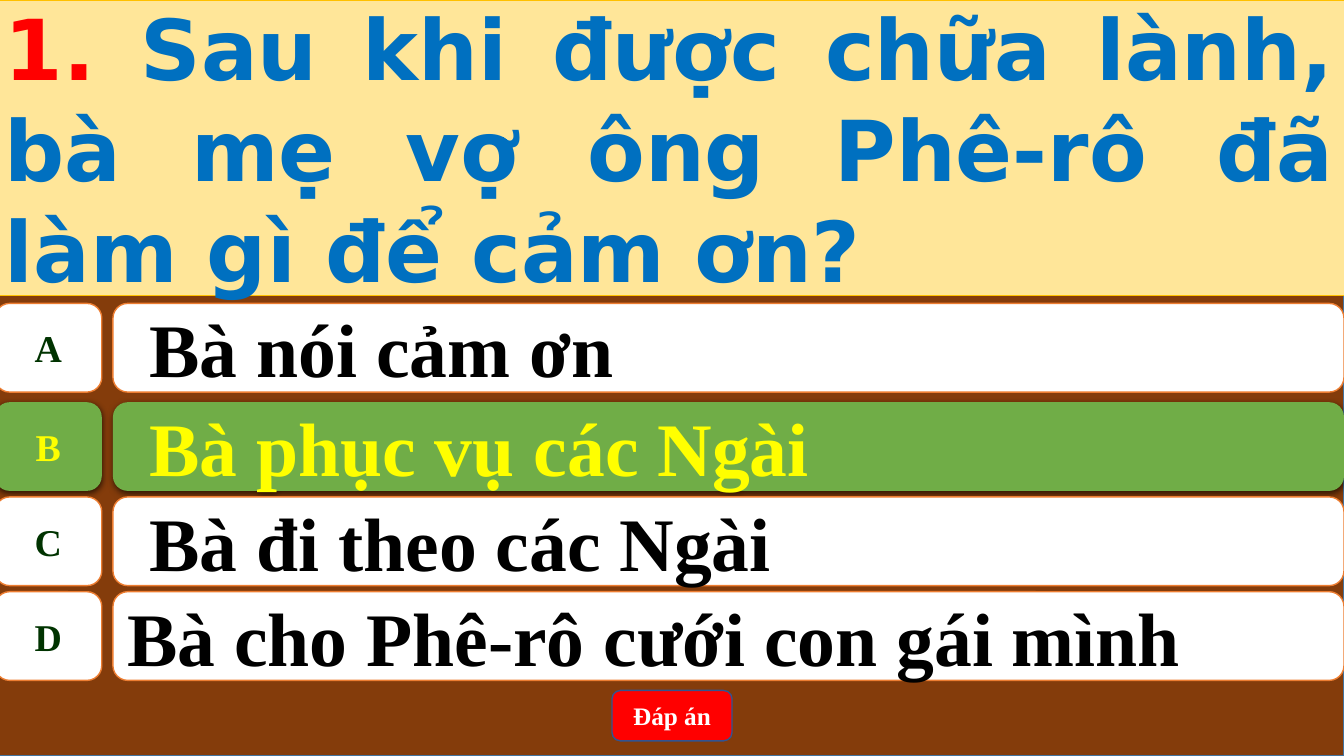
from lxml import etree
from pptx import Presentation
from pptx.dml.color import RGBColor
from pptx.enum.shapes import MSO_SHAPE
from pptx.enum.text import MSO_ANCHOR, PP_ALIGN
from pptx.oxml.ns import qn
from pptx.util import Pt

RECTANGLE = MSO_SHAPE.RECTANGLE
ROUNDED = MSO_SHAPE.ROUNDED_RECTANGLE
LETTER_BOX = MSO_SHAPE.FLOWCHART_ALTERNATE_PROCESS
MIDDLE = MSO_ANCHOR.MIDDLE
LEFT, CENTER, JUSTIFY = PP_ALIGN.LEFT, PP_ALIGN.CENTER, PP_ALIGN.JUSTIFY

EMU_PER_PX = 9144
SERIF = "Times New Roman"
SANS = "DejaVu Sans"
COLORS = {
    "brown": "843C0B",
    "brown_line": "43739E",
    "cream": "FFE699",
    "gold": "FFC000",
    "white": "FFFFFF",
    "orange": "ED7D31",
    "green": "70AD47",
    "dark_green": "003300",
    "yellow": "FFFF00",
    "red": "FF0000",
    "blue": "0070C0",
    "button_line": "325491",
    "black": "000000",
}
ANSWERS = [
    ("A", "Bà nói cảm ơn", 301, True),
    ("B", "Bà phục vụ các Ngài", 399, True),
    ("C", "Bà đi theo các Ngài", 493, True),
    ("D", "Bà cho Phê-rô cưới con gái mình", 587, False),
]
CORRECT = "B"


def px(length):
    return length * EMU_PER_PX


def color(name):
    return RGBColor.from_string(COLORS[name])


def add_box(slide, kind, box, fill, line=None, line_width=1):
    shape = slide.shapes.add_shape(kind, *map(px, box))
    shape.shadow.inherit = False
    shape.fill.solid()
    shape.fill.fore_color.rgb = color(fill)
    if line:
        shape.line.color.rgb = color(line)
        shape.line.width = Pt(line_width)
    else:
        shape.line.fill.background()
    return shape


def add_text(shape, runs, size, font, alignment, wrap=True):
    frame = shape.text_frame
    frame.word_wrap = wrap
    frame.vertical_anchor = MIDDLE
    paragraph = frame.paragraphs[0]
    paragraph.alignment = alignment
    for text, text_color in runs:
        run = paragraph.add_run()
        run.text = text
        run.font.size = Pt(size)
        run.font.name = font
        run.font.bold = True
        run.font.color.rgb = color(text_color)
    return paragraph


def add_drop_shadow(shape):
    effects = shape._element.spPr.find(qn("a:effectLst"))
    shadow = etree.SubElement(
        effects, qn("a:outerShdw"), blurRad=str(Pt(4.5)), dist=str(Pt(1.5)),
        dir="5400000", algn="ctr", rotWithShape="0")
    shade = etree.SubElement(shadow, qn("a:srgbClr"), val=COLORS["black"])
    etree.SubElement(shade, qn("a:alpha"), val="63000")


def add_question(slide, box):
    panel = add_box(slide, RECTANGLE, box, "cream", "gold", 0.5)
    runs = [
        ("1. ", "red"),
        ("Sau khi được chữa lành, bà mẹ vợ ông Phê-rô đã làm gì để cảm ơn?", "blue"),
    ]
    add_text(panel, runs, 60, SANS, JUSTIFY)


def add_answer(slide, box, letter, answer, indented):
    left, top, width, height = box
    letter_width, gap = 106, 11
    answer_left = left + letter_width + gap
    correct = letter == CORRECT
    fill, line = ("green", None) if correct else ("white", "orange")

    bar = add_box(slide, ROUNDED,
                  (answer_left, top, left + width - answer_left, height), fill, line)
    paragraph = add_text(bar, [(answer, "yellow" if correct else "black")],
                         54, SERIF, LEFT)
    if indented:
        properties = paragraph._p.get_or_add_pPr()
        properties.set("marL", str(px(50)))
        properties.set("indent", str(px(-28)))

    label = add_box(slide, LETTER_BOX, (left, top, letter_width, height), fill, line)
    add_text(label, [(letter, "yellow" if correct else "dark_green")],
             27, SERIF, CENTER, wrap=False)
    if correct:
        add_drop_shadow(bar)
        add_drop_shadow(label)


def add_answer_button(slide, box):
    button = add_box(slide, ROUNDED, box, "red", "button_line")
    add_text(button, [("Đáp án", "white")], 18, SERIF, CENTER)


def build_quiz_slide(presentation):
    slide = presentation.slides.add_slide(presentation.slide_layouts[6])
    left, width = -5, 1338
    add_box(slide, RECTANGLE, (left, 0, width, 750), "brown", "brown_line")
    for letter, answer, top, indented in ANSWERS:
        add_answer(slide, (left, top, width, 88), letter, answer, indented)
    add_answer_button(slide, (607, 685, 119, 50))
    add_question(slide, (left, 0, width, 293))


def main():
    presentation = Presentation()
    presentation.slide_width = px(1333)
    presentation.slide_height = px(750)
    build_quiz_slide(presentation)
    presentation.save("out.pptx")


if __name__ == "__main__":
    main()
